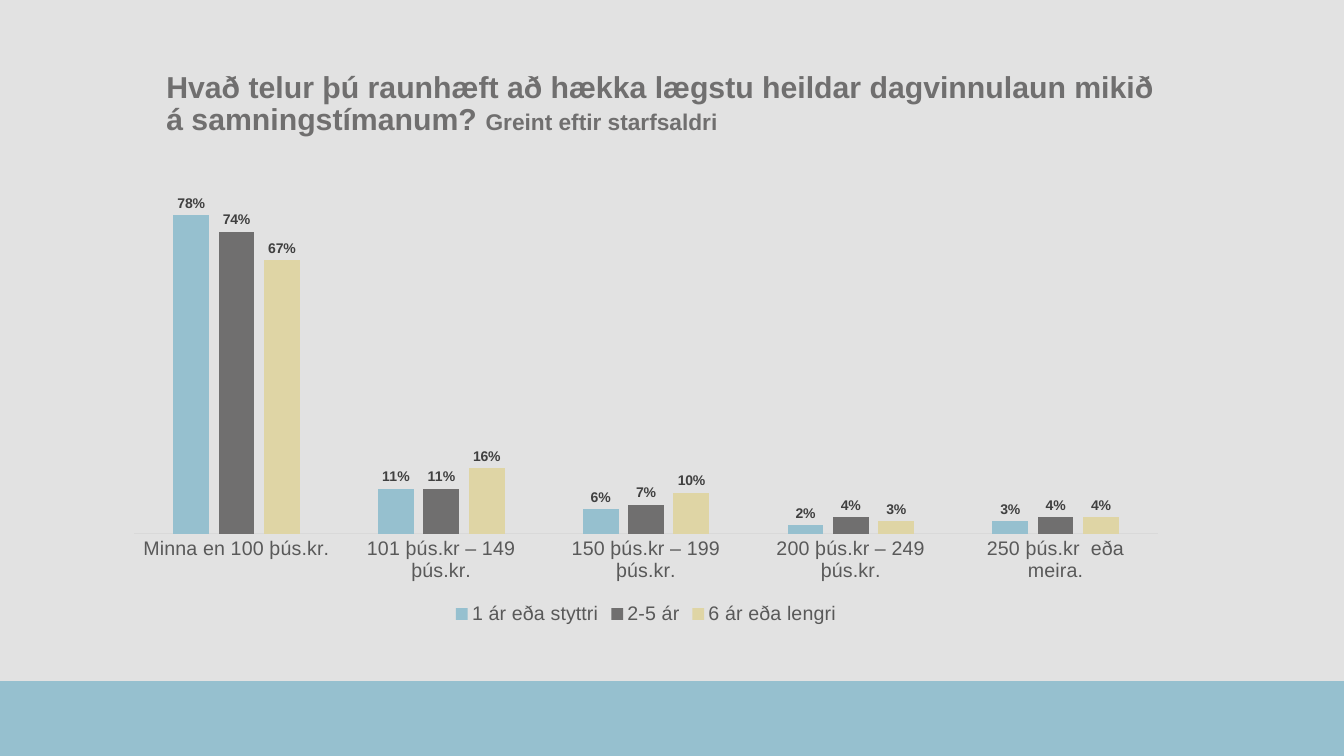
"""Build a slide with a column chart of pay-rise answers by length of service."""
from dataclasses import dataclass

from lxml import etree
from pptx import Presentation
from pptx.chart.data import CategoryChartData as Data
from pptx.dml.color import RGBColor as Rgb
from pptx.enum.chart import XL_CHART_TYPE as Kind
from pptx.enum.chart import XL_LABEL_POSITION as Spot
from pptx.enum.chart import XL_LEGEND_POSITION as Side
from pptx.enum.chart import XL_TICK_MARK as Tick
from pptx.enum.shapes import MSO_SHAPE as Form
from pptx.enum.text import MSO_ANCHOR as Anchor
from pptx.enum.text import MSO_AUTO_SIZE as Fit
from pptx.enum.text import PP_ALIGN as Align
from pptx.oxml.ns import qn
from pptx.util import Pt


@dataclass(frozen=True)
class Theme:
    """Hold the colours and type sizes."""
    face: str = "Arial"
    back: str = "E2E2E2"
    blue: str = "96C0CF"
    grey: str = "706F6F"
    sand: str = "DFD5A5"
    text: str = "595959"
    label: str = "404040"
    rule: str = "D9D9D9"
    head: float = 21.6
    sub: float = 16.2
    axis: float = 14
    value: float = 10


THEME = Theme()
ASK = "Hvað telur þú raunhæft að hækka lægstu heildar dagvinnulaun mikið á samningstímanum? "
SPLIT = "Greint eftir starfsaldri"
GROUPS = ["Minna en 100 þús.kr.", "101 þús.kr – 149 þús.kr.", "150 þús.kr – 199 þús.kr.",
          "200 þús.kr – 249 þús.kr.", "250 þús.kr  eða meira."]
SERIES = [
    ("1 ár eða styttri", [0.78, 0.11, 0.06, 0.02, 0.03], THEME.blue),
    ("2-5 ár", [0.74, 0.11, 0.07, 0.04, 0.04], THEME.grey),
    ("6 ár eða lengri", [0.67, 0.16, 0.1, 0.03, 0.04], THEME.sand),
]
PLOT = {"x": 0.02, "y": 0.03, "w": 0.96, "h": 0.77}


def paint(fill, tone):
    """Give a fill one solid colour."""
    fill.solid()
    fill.fore_color.rgb = Rgb.from_string(tone)


def style(font, size, tone, bold=False):
    """Set face, size, colour and weight of a font."""
    font.name = THEME.face
    font.size = Pt(size)
    font.bold = bold
    font.color.rgb = Rgb.from_string(tone)


def add_band(slide):
    """Draw the band along the foot of the slide."""
    band = slide.shapes.add_shape(Form.RECTANGLE, Pt(0), Pt(486.5), Pt(960), Pt(53.5))
    band.shadow.inherit = False
    paint(band.fill, THEME.blue)
    band.line.fill.background()


def set_title(slide):
    """Place the question and its smaller ending in the title."""
    title = slide.shapes.title
    title.left, title.top, title.width, title.height = Pt(111.6), Pt(50.4), Pt(737.3), Pt(49)
    frame = title.text_frame
    frame.text = ASK
    frame.word_wrap = True
    frame.auto_size = Fit.NONE
    frame.vertical_anchor = Anchor.MIDDLE
    para = frame.paragraphs[0]
    para.alignment = Align.LEFT
    para.line_spacing = 0.9
    para.add_run().text = SPLIT
    for run, size in zip(para.runs, (THEME.head, THEME.sub)):
        style(run.font, size, THEME.grey, True)


def fix_plot(chart):
    """Fix the inner plot area as shares of the chart."""
    area = chart._chartSpace.chart.plotArea
    for old in area.findall(qn("c:layout")):
        area.remove(old)
    layout = etree.Element(qn("c:layout"))
    area.insert(0, layout)
    manual = etree.SubElement(layout, qn("c:manualLayout"))
    parts = [("layoutTarget", "inner"), ("xMode", "edge"), ("yMode", "edge"), *PLOT.items()]
    for name, val in parts:
        etree.SubElement(manual, qn(f"c:{name}")).set("val", str(val))


def set_axes(chart):
    """Show the group names and hide the value scale."""
    groups = chart.category_axis
    groups.major_tick_mark = groups.minor_tick_mark = Tick.NONE
    groups.format.line.width = Pt(0.75)
    paint(groups.format.line.fill, THEME.rule)
    style(groups.tick_labels.font, THEME.axis, THEME.text)
    scale = chart.value_axis
    scale.minimum_scale, scale.maximum_scale = 0, 0.9
    scale.has_major_gridlines = False
    scale.visible = False


def set_bars(chart):
    """Colour and label each series."""
    plot = chart.plots[0]
    plot.gap_width, plot.overlap = 219, -27
    plot.vary_by_categories = False
    for bars, (_, _, tone) in zip(plot.series, SERIES):
        paint(bars.format.fill, tone)
        labels = bars.data_labels
        labels.show_value = True
        labels.number_format = "0%"
        labels.number_format_is_linked = False
        labels.position = Spot.OUTSIDE_END
        style(labels.font, THEME.value, THEME.label, True)


def add_columns(slide):
    """Add the clustered column chart with its legend."""
    data = Data(number_format="0%")
    data.categories = GROUPS
    for name, vals, _ in SERIES:
        data.add_series(name, vals)
    chart = slide.shapes.add_chart(Kind.COLUMN_CLUSTERED, Pt(80.6), Pt(108.7),
                                   Pt(761.8), Pt(340.6), data).chart
    chart.has_title = False
    style(chart.font, THEME.value, THEME.text)
    chart.has_legend = True
    chart.legend.position = Side.BOTTOM
    chart.legend.include_in_layout = False
    style(chart.legend.font, THEME.axis, THEME.text)
    set_axes(chart)
    set_bars(chart)
    fix_plot(chart)


def main():
    """Build and save the slide."""
    deck = Presentation()
    deck.slide_width, deck.slide_height = Pt(960), Pt(540)
    slide = deck.slides.add_slide(deck.slide_layouts[5])
    paint(slide.background.fill, THEME.back)
    add_band(slide)
    add_columns(slide)
    set_title(slide)
    deck.save("out.pptx")


if __name__ == "__main__":
    main()
